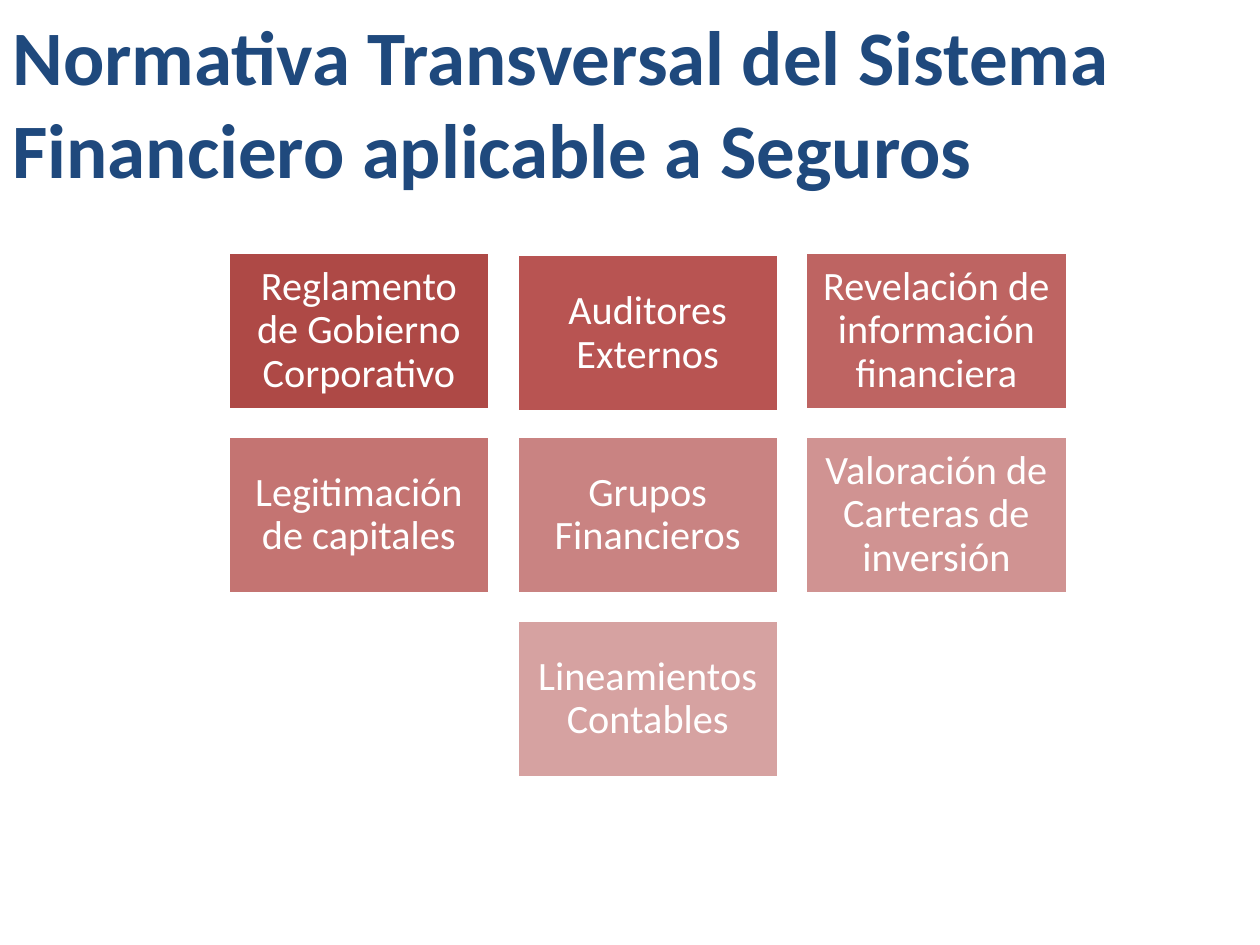
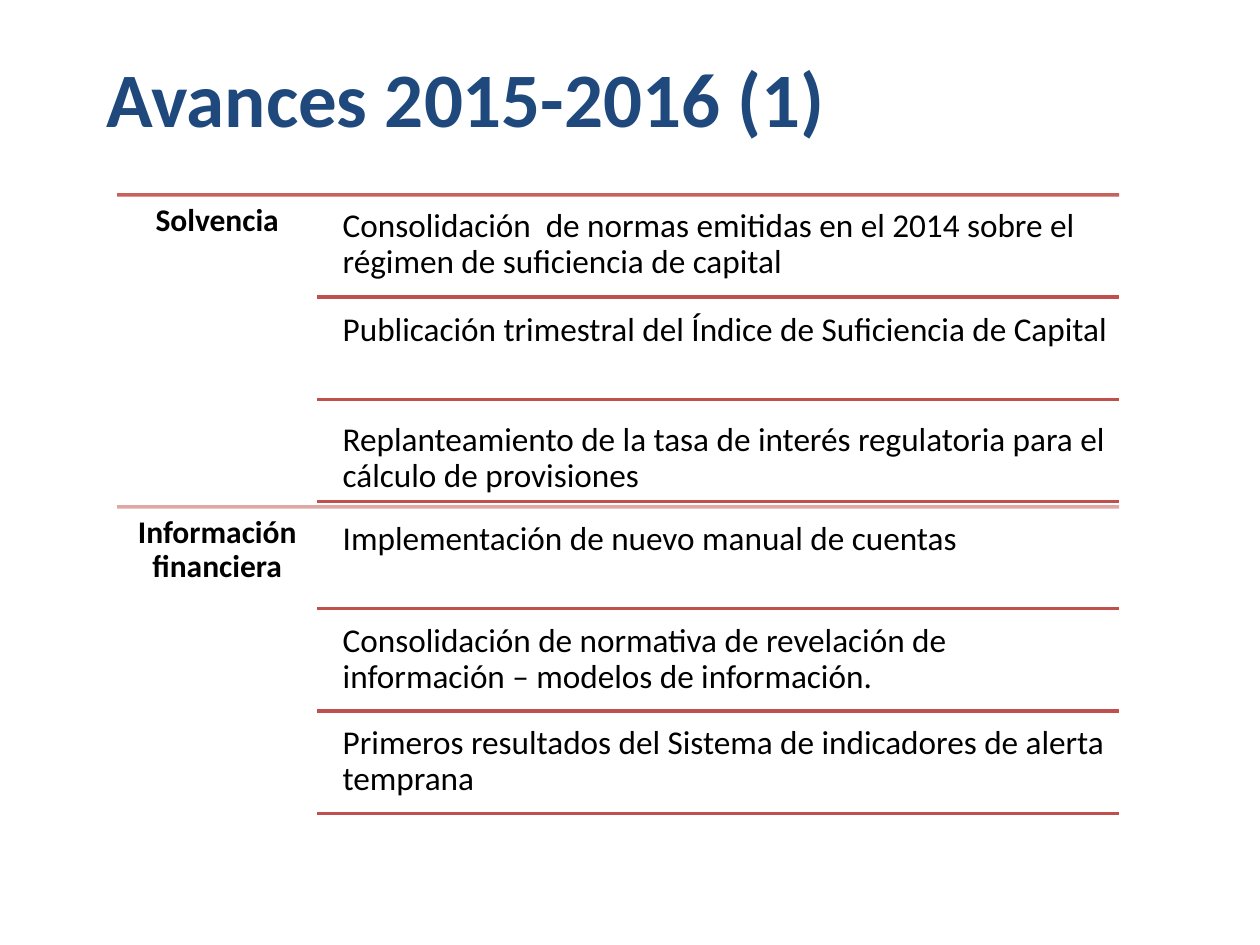
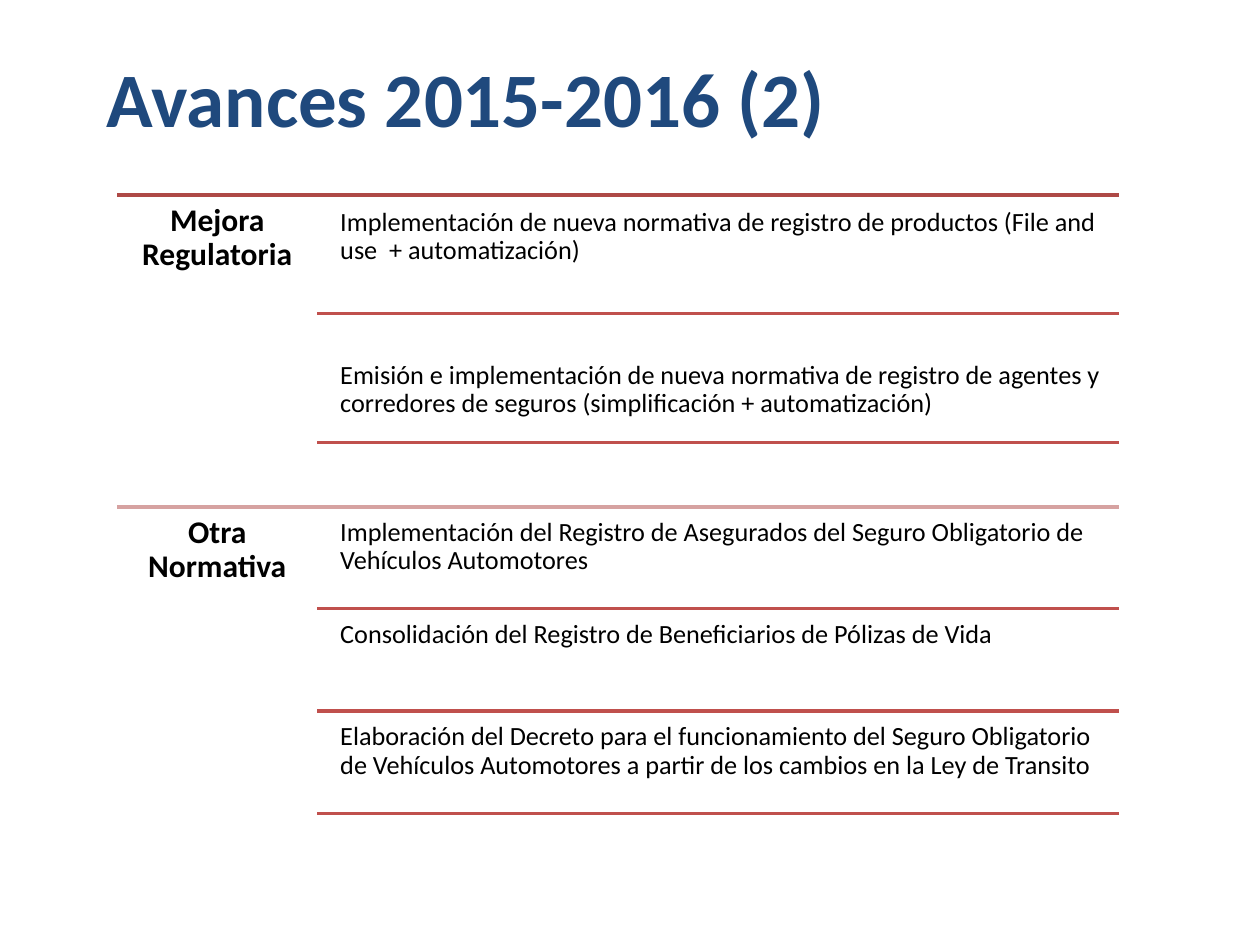
"""Build three slides on insurance regulation and its progress."""
import lxml.etree
import pptx
import pptx.dml.color
import pptx.enum.shapes
import pptx.enum.text
import pptx.oxml.ns
import pptx.util

Cm = pptx.util.Cm
Pt = pptx.util.Pt
ALIGN = pptx.enum.text.PP_ALIGN
ANCHOR = pptx.enum.text.MSO_ANCHOR

FONT = "Calibri"
COLOURS = {
    "title": "1F497D", "text": "000000", "white": "FFFFFF", "accent": "C0504D",
    "red_1": "AE4946", "red_2": "B85452", "red_3": "BE6462", "red_4": "C47472",
    "red_5": "C98382", "red_6": "D09392", "red_7": "D6A2A1",
}
COLUMN_LEFTS = [4.6, 10.42, 16.24]
ROW_TOPS = [5.08, 8.79, 12.5]
CARDS = [
    (0, ROW_TOPS[0], "Reglamento de Gobierno Corporativo"),
    (1, ROW_TOPS[0] + 0.05, "Auditores Externos"),
    (2, ROW_TOPS[0], "Revelación de información financiera"),
    (0, ROW_TOPS[1], "Legitimación de capitales"),
    (1, ROW_TOPS[1], "Grupos Financieros"),
    (2, ROW_TOPS[1], "Valoración de Carteras de inversión"),
    (1, ROW_TOPS[2], "Lineamientos Contables"),
]
LABEL_LEFT, ITEM_RULE_LEFT, ITEM_LEFT, RIGHT = 2.36, 6.4, 6.71, 22.56
UPPER_TOP, LOWER_TOP = 3.93, 10.22
LOWER_TEXT_TOPS = [10.31, 12.37, 14.43]
LOWER_RULE_TOPS = [12.27, 14.33, 16.4]


def colour(name):
    """Return the palette colour with this name."""
    return pptx.dml.color.RGBColor.from_string(COLOURS[name])


class Deck:
    """Hold the presentation, its style and the current slide."""

    def __init__(self):
        """Start an empty presentation."""
        self.presentation = pptx.Presentation()
        self.presentation.slide_width = Cm(25.4)
        self.presentation.slide_height = Cm(19.05)
        self.slide = None

    def set_text(self, shape, text, size, name, inset, bold=False,
                 align=ALIGN.LEFT, anchor=ANCHOR.TOP, spacing=0.9):
        """Put one formatted paragraph into a shape."""
        frame = shape.text_frame
        frame.text = text
        frame.word_wrap = True
        frame.auto_size = pptx.enum.text.MSO_AUTO_SIZE.NONE
        frame.vertical_anchor = anchor
        frame.margin_left = frame.margin_right = Cm(inset)
        frame.margin_top = frame.margin_bottom = Cm(inset)
        paragraph = frame.paragraphs[0]
        paragraph.alignment = align
        paragraph.line_spacing = spacing
        paragraph.font.name = FONT
        paragraph.font.size = Pt(size)
        paragraph.font.bold = bold
        paragraph.font.color.rgb = colour(name)

    def add_slide(self, title, left=1.9, top=0.89, width=22.61, height=2.13):
        """Add a slide with its title."""
        layout = self.presentation.slide_layouts[5]
        self.slide = self.presentation.slides.add_slide(layout)
        shape = self.slide.shapes.title
        shape.left, shape.top = Cm(left), Cm(top)
        shape.width, shape.height = Cm(width), Cm(height)
        self.set_text(shape, title, 44, "title", 0.25, bold=True, spacing=1.0)
        shape.text_frame.margin_top = shape.text_frame.margin_bottom = Cm(0.13)

    def add_card(self, left, top, text, fill):
        """Add a filled card with centred text."""
        shape = self.slide.shapes.add_shape(
            pptx.enum.shapes.MSO_SHAPE.RECTANGLE, Cm(left), Cm(top), Cm(5.28), Cm(3.18))
        shape.shadow.inherit = False
        shape.fill.solid()
        shape.fill.fore_color.rgb = colour(fill)
        shape.line.color.rgb = colour("white")
        shape.line.width = Pt(2)
        self.set_text(shape, text, 23, "white", 0.25, align=ALIGN.CENTER, anchor=ANCHOR.MIDDLE)

    def add_text(self, left, top, width, height, text, size, inset, **style):
        """Add a text box."""
        box = self.slide.shapes.add_textbox(Cm(left), Cm(top), Cm(width), Cm(height))
        self.set_text(box, text, size, "text", inset, **style)

    def add_rule(self, left, top, name="accent", opacity=100):
        """Add a horizontal rule that ends at the right edge of the list."""
        rule = self.slide.shapes.add_connector(
            pptx.enum.shapes.MSO_CONNECTOR.STRAIGHT, Cm(left), Cm(top), Cm(RIGHT), Cm(top))
        rule.line.width = Pt(2)
        rule.line.color.rgb = colour(name)
        properties = rule._element.spPr
        qn = pptx.oxml.ns.qn
        if opacity < 100:
            fill_colour = next(properties.iter(qn("a:srgbClr")))
            alpha = lxml.etree.SubElement(fill_colour, qn("a:alpha"))
            alpha.set("val", str(opacity * 1000))
        lxml.etree.SubElement(properties, qn("a:effectLst"))

    def add_section(self, label, top, rule_style, items, text_tops, rule_tops,
                    size, inset, item_height=1.96):
        """Add a labelled section with its ruled items."""
        self.add_rule(LABEL_LEFT, top, **rule_style)
        self.add_text(LABEL_LEFT, top, ITEM_RULE_LEFT - LABEL_LEFT, 1.73, label, 18, 0.18,
                      bold=True, align=ALIGN.CENTER)
        for item, text_top, rule_top in zip(items, text_tops, rule_tops):
            self.add_text(ITEM_LEFT, text_top, RIGHT - ITEM_LEFT, item_height,
                          item, size, inset)
            self.add_rule(ITEM_RULE_LEFT, rule_top)


def main():
    """Build and save the slides."""
    deck = Deck()

    deck.add_slide("Normativa Transversal del Sistema Financiero aplicable a Seguros",
                   left=0, top=0.05, width=26.14, height=4.01)
    for number, (column, top, text) in enumerate(CARDS, start=1):
        deck.add_card(COLUMN_LEFTS[column], top, text, f"red_{number}")

    deck.add_slide("Avances 2015-2016 (1)")
    deck.add_section(
        "Solvencia", UPPER_TOP, {"opacity": 90},
        ["Consolidación  de normas emitidas en el 2014 sobre el régimen de suficiencia de capital",
         "Publicación trimestral del Índice de Suficiencia de Capital",
         "Replanteamiento de la tasa de interés regulatoria para el cálculo de provisiones"],
        [4.01, 6.1, 8.33], [5.99, 8.05, 10.11], size=19, inset=0.2)
    deck.add_section(
        "Información financiera", LOWER_TOP, {"opacity": 50},
        ["Implementación de nuevo manual de cuentas",
         "Consolidación de normativa de revelación de información – modelos de información.",
         "Primeros resultados del Sistema de indicadores de alerta temprana"],
        LOWER_TEXT_TOPS, LOWER_RULE_TOPS, size=19, inset=0.2)

    deck.add_slide("Avances 2015-2016 (2)")
    deck.add_section(
        "Mejora Regulatoria", UPPER_TOP, {"name": "red_1"},
        ["Implementación de nueva normativa de registro de productos "
         "(File and use  + automatización)",
         "Emisión e implementación de nueva normativa de registro de agentes y "
         "corredores de seguros (simplificación + automatización)"],
        [4.06, 7.14], [6.32, 8.92], size=15, inset=0.15, item_height=2.92)
    deck.add_section(
        "Otra Normativa", LOWER_TOP, {"name": "red_7"},
        ["Implementación del Registro de Asegurados del Seguro Obligatorio de "
         "Vehículos Automotores",
         "Consolidación del Registro de Beneficiarios de Pólizas de Vida",
         "Elaboración del Decreto para el funcionamiento del Seguro Obligatorio de "
         "Vehículos Automotores a partir de los cambios en la Ley de Transito"],
        LOWER_TEXT_TOPS, LOWER_RULE_TOPS, size=15, inset=0.15)

    deck.presentation.save("out.pptx")


if __name__ == "__main__":
    main()
